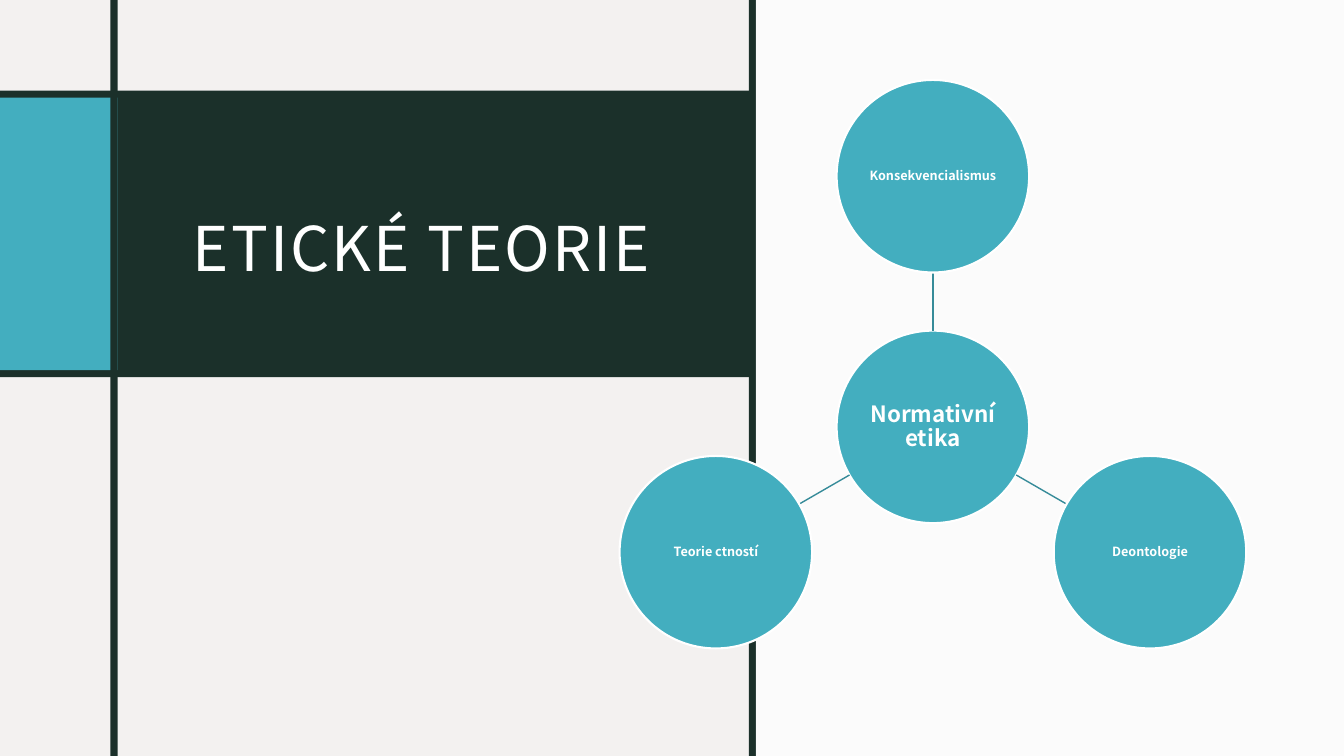
import math
from dataclasses import dataclass

import lxml.etree
import pptx
import pptx.dml.color
import pptx.enum.shapes
import pptx.enum.text
import pptx.oxml.ns
import pptx.util

SLIDE_WIDTH = pptx.util.Inches(13.333)
SLIDE_HEIGHT = pptx.util.Inches(7.5)
COLUMNS, ROWS = 160, 90
BAR = 0.84
SIDE_EDGE, PANEL_EDGE = 14, 90
BAND_TOP, BAND_HEIGHT = 10.8, 34.1
HUB_X, HUB_Y = 111.06, 50.82
RADIUS, REACH = 11.46, 29.84


@dataclass(frozen=True)
class Theme:
    paper: str = "F3F1F0"
    dark: str = "1B302A"
    accent: str = "43AEBF"
    spoke: str = "368B99"
    white: str = "FFFFFF"
    font: str = "Noto Sans CJK JP"
    title_size: float = 44
    hub_size: float = 16
    theory_size: float = 9


THEME = Theme()


def across(columns):
    return round(SLIDE_WIDTH * columns / COLUMNS)


def down(rows):
    return round(SLIDE_HEIGHT * rows / ROWS)


def rgb(color):
    return pptx.dml.color.RGBColor.from_string(color)


def add_filled(slide, kind, left, top, width, height, color):
    shape = slide.shapes.add_shape(
        kind, across(left), down(top), across(width), down(height))
    shape.shadow.inherit = False
    shape.fill.solid()
    shape.fill.fore_color.rgb = rgb(color)
    shape.line.fill.background()
    return shape


def add_block(slide, left, top, width, height, color):
    rectangle = pptx.enum.shapes.MSO_SHAPE.RECTANGLE
    return add_filled(slide, rectangle, left, top, width, height, color)


def make_translucent(shape, percent):
    color = shape.fill._xPr.find(".//" + pptx.oxml.ns.qn("a:srgbClr"))
    alpha = lxml.etree.SubElement(color, pptx.oxml.ns.qn("a:alpha"))
    alpha.set("val", str(percent * 1000))


def write(paragraph, text, size, bold=False):
    run = paragraph.add_run()
    run.text = text
    run.font.name = THEME.font
    run.font.size = pptx.util.Pt(size)
    run.font.bold = bold
    run.font.color.rgb = rgb(THEME.white)
    return run


def set_frame(frame, inset):
    frame.word_wrap = True
    frame.auto_size = pptx.enum.text.MSO_AUTO_SIZE.NONE
    frame.vertical_anchor = pptx.enum.text.MSO_ANCHOR.MIDDLE
    frame.margin_left = frame.margin_right = pptx.util.Inches(inset)
    frame.margin_top = frame.margin_bottom = pptx.util.Inches(inset)


def add_circle(slide, x, y, label, size):
    circle = add_filled(slide, pptx.enum.shapes.MSO_SHAPE.OVAL, x - RADIUS,
                        y - RADIUS, 2 * RADIUS, 2 * RADIUS, THEME.accent)
    circle.line.color.rgb = rgb(THEME.white)
    circle.line.width = pptx.util.Pt(1.5)
    set_frame(circle.text_frame, 0.01)
    paragraph = circle.text_frame.paragraphs[0]
    paragraph.alignment = pptx.enum.text.PP_ALIGN.CENTER
    paragraph.line_spacing = 0.9
    write(paragraph, label, size, bold=True)


def from_hub(angle, distance):
    turn = math.radians(angle)
    return HUB_X + distance * math.cos(turn), HUB_Y + distance * math.sin(turn)


def add_spoke(slide, angle):
    start_x, start_y = from_hub(angle, RADIUS)
    end_x, end_y = from_hub(angle, REACH - RADIUS)
    spoke = slide.shapes.add_connector(
        pptx.enum.shapes.MSO_CONNECTOR.STRAIGHT,
        across(start_x), down(start_y), across(end_x), down(end_y))
    spoke.line.color.rgb = rgb(THEME.spoke)
    spoke.line.width = pptx.util.Pt(1)
    lxml.etree.SubElement(spoke._element.spPr, pptx.oxml.ns.qn("a:effectLst"))


def add_backdrop(slide):
    slide.background.fill.solid()
    slide.background.fill.fore_color.rgb = rgb(THEME.paper)
    add_block(slide, 0, BAND_TOP, PANEL_EDGE - BAR, BAND_HEIGHT, THEME.dark)
    add_block(slide, 0, BAND_TOP + BAR, SIDE_EDGE, BAND_HEIGHT - 2 * BAR,
              THEME.accent)
    for edge in (SIDE_EDGE, PANEL_EDGE):
        add_block(slide, edge - BAR, 0, BAR, ROWS, THEME.dark)
    panel = add_block(slide, PANEL_EDGE, 0, COLUMNS - PANEL_EDGE, ROWS,
                      THEME.white)
    make_translucent(panel, 75)


def add_title(slide, text):
    title = slide.shapes.title
    title.left, title.top = across(21.5), down(13.9)
    title.width, title.height = across(62.3), down(28.6)
    set_frame(title.text_frame, 0.12)
    title.text_frame.margin_bottom = pptx.util.Inches(0.1)
    paragraph = title.text_frame.paragraphs[0]
    paragraph.alignment = pptx.enum.text.PP_ALIGN.LEFT
    paragraph.line_spacing = 1.25
    run = write(paragraph, text, THEME.title_size)
    run._r.get_or_add_rPr().set("spc", "150")
    slide.shapes._spTree.append(title._element)


def add_theories(slide, hub, theories):
    add_circle(slide, HUB_X, HUB_Y, hub, THEME.hub_size)
    for position, theory in enumerate(theories):
        angle = -90 + position * 360 / len(theories)
        add_spoke(slide, angle)
        add_circle(slide, *from_hub(angle, REACH), theory, THEME.theory_size)


def main():
    deck = pptx.Presentation()
    deck.slide_width, deck.slide_height = SLIDE_WIDTH, SLIDE_HEIGHT
    slide = deck.slides.add_slide(deck.slide_layouts.get_by_name("Title Only"))
    add_backdrop(slide)
    add_title(slide, "ETICKÉ TEORIE")
    add_theories(slide, "Normativní etika",
                 ["Konsekvencialismus", "Deontologie", "Teorie ctností"])
    deck.save("out.pptx")


if __name__ == "__main__":
    main()
